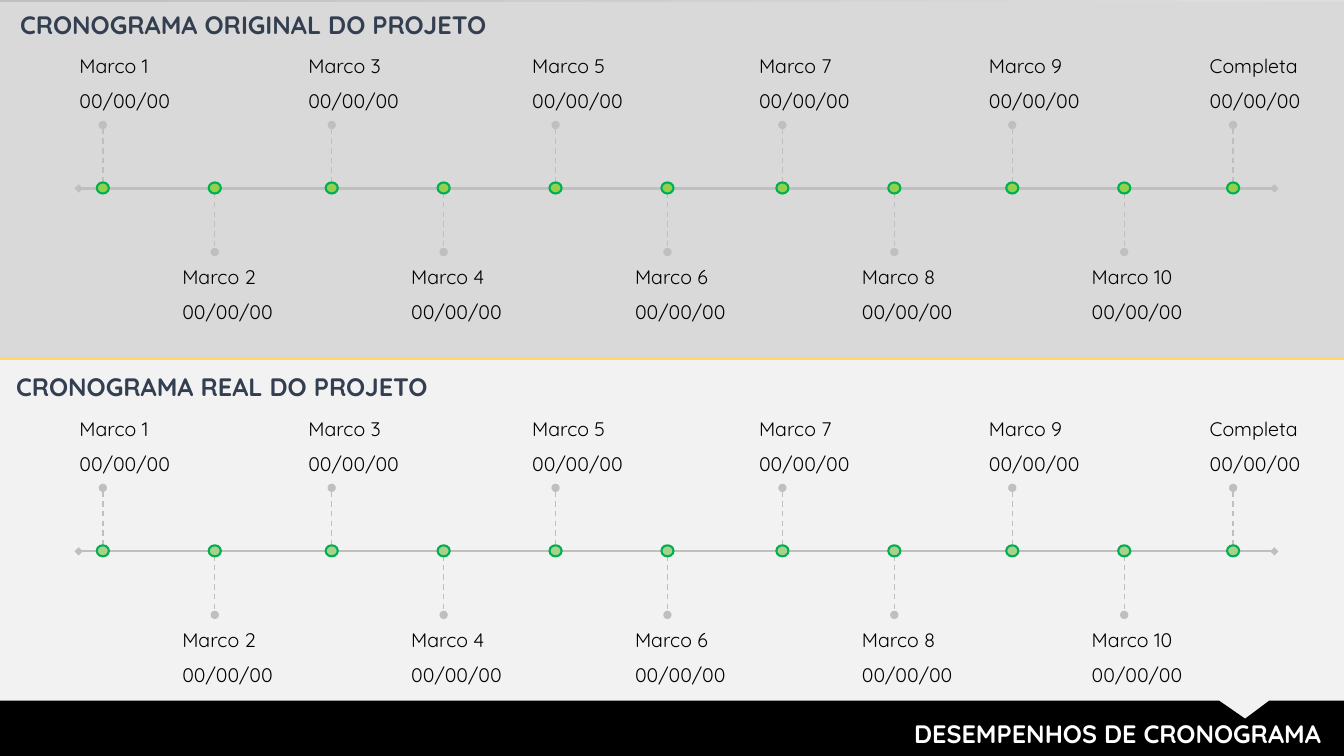
import pptx
import pptx.util
import pptx.dml.color
import pptx.enum.dml
import pptx.enum.shapes
import pptx.enum.text
from lxml import etree
from pptx.oxml.ns import qn
from pptx.util import Inches, Pt

COLORS = {
    "upper": "D9D9D9", "lower": "F2F2F2", "backdrop": "BFBFBF",
    "axis": "BFBFBF", "divider": "FFD966", "ring": "00B050",
    "planned": "92D050", "actual": "A9D18E", "heading": "333F50",
    "label": "000000", "footer": "000000", "footer_text": "FFFFFF",
}
FONT = "Quicksand"
WIDTH, HEIGHT = 13.33, 7.5
NAMES = [f"Marco {number}" for number in range(1, 11)] + ["Completa"]
STEMS = [1.02, 2.13, 3.29, 4.4, 5.51, 6.62, 7.76, 8.87, 10.04, 11.15, 12.23]
DATE = "00/00/00"
AXIS_DROP = 1.87
STEM_LENGTH = 0.63


def color(name):
    return pptx.dml.color.RGBColor.from_string(COLORS[name])


def paint(shape, fill, line=None):
    shape.shadow.inherit = False
    shape.fill.solid()
    shape.fill.fore_color.rgb = color(fill)
    if line:
        shape.line.color.rgb = color(line)
        shape.line.width = Pt(1.5)
    else:
        shape.line.fill.background()


def add_block(shapes, kind, left, top, width, height, fill, line=None):
    block = shapes.add_shape(kind, Inches(left), Inches(top), Inches(width), Inches(height))
    paint(block, fill, line)


def add_line(shapes, start, end, line_color, width, ends=None, dashed=False):
    line = shapes.add_connector(
        pptx.enum.shapes.MSO_CONNECTOR.STRAIGHT,
        Inches(start[0]), Inches(start[1]), Inches(end[0]), Inches(end[1]))
    line.line.color.rgb = color(line_color)
    line.line.width = Pt(width)
    if dashed:
        line.line.dash_style = pptx.enum.dml.MSO_LINE.DASH
    if ends:
        outline = line.line._get_or_add_ln()
        for tag in ("a:headEnd", "a:tailEnd"):
            etree.SubElement(outline, qn(tag), type=ends)
    etree.SubElement(line._element.spPr, qn("a:effectLst"))


def add_text(shapes, left, top, width, height, lines, size, text_color,
             bold=False, inset=(0.1, 0.05), align="LEFT", after=0, spacing=None):
    box = shapes.add_textbox(Inches(left), Inches(top), Inches(width), Inches(height))
    frame = box.text_frame
    frame.word_wrap = True
    frame.margin_left = frame.margin_right = Inches(inset[0])
    frame.margin_top = frame.margin_bottom = Inches(inset[1])
    for index, line in enumerate(lines):
        para = frame.add_paragraph() if index else frame.paragraphs[0]
        para.alignment = getattr(pptx.enum.text.PP_ALIGN, align)
        para.space_after = Pt(after)
        if spacing:
            para.line_spacing = Pt(spacing)
        span = para.add_run()
        span.text = line
        span.font.name = FONT
        span.font.size = Pt(size)
        span.font.bold = bold
        span.font.color.rgb = color(text_color)


def add_background(page):
    fill = page.background.fill
    fill.gradient()
    fill.gradient_angle = 135
    for stop, name, position in zip(fill.gradient_stops, ("lower", "backdrop"), (0, 1)):
        stop.color.rgb = color(name)
        stop.position = position


def add_panel(page, top, height, fill):
    rectangle = pptx.enum.shapes.MSO_SHAPE.RECTANGLE
    add_block(page.shapes, rectangle, -0.02, top, WIDTH + 0.02, height, fill)


def add_footer(page, top, bottom):
    # Black band with a notch in its upper edge
    points = [(0, top), (12.09, top), (12.35, top + 0.18), (12.59, top),
              (WIDTH, top), (WIDTH, bottom), (0, bottom)]
    corners = [(Inches(x), Inches(y)) for x, y in points]
    builder = page.shapes.build_freeform(*corners[0])
    builder.add_line_segments(corners[1:], close=True)
    paint(builder.convert_to_shape(), "footer")
    add_text(page.shapes, 4.14, top + 0.13, 9.06, 0.4, ["DESEMPENHOS DE CRONOGRAMA"],
             18, "footer_text", bold=True, align="RIGHT")


def add_timeline(page, left, top, heading, dot_fill):
    shapes = page.shapes.add_group_shape().shapes
    axis = top + AXIS_DROP
    add_line(shapes, (0.78, axis), (12.64, axis), "axis", 1.5, "diamond")

    # Milestones alternate above and below the axis
    for index, (name, x) in enumerate(zip(NAMES, STEMS)):
        above = index % 2 == 0
        start = axis - STEM_LENGTH if above else axis
        add_line(shapes, (x, start), (x, start + STEM_LENGTH), "axis", 1, "oval", dashed=True)
        add_block(shapes, pptx.enum.shapes.MSO_SHAPE.OVAL,
                  x - 0.06, axis - 0.06, 0.12, 0.11, dot_fill, "ring")
        label_left = x - (0.33 if above else 0.42)
        label_top = axis + (-1.38 if above else 0.71)
        add_text(shapes, label_left, label_top, 1.9, 0.64, [name, DATE], 14, "label", after=8)

    add_text(page.shapes, left, top + 0.03, 5.28, 0.41, [heading], 18, "heading",
             bold=True, inset=(0.12, 0.06), spacing=21.5)


def main():
    deck = pptx.Presentation()
    deck.slide_width, deck.slide_height = Inches(WIDTH), Inches(HEIGHT)
    page = deck.slides.add_slide(deck.slide_layouts[6])

    # Backdrop, panels and footer
    add_background(page)
    add_panel(page, 0.02, 3.54, "upper")
    add_panel(page, 3.56, 3.96, "lower")
    add_footer(page, 6.95, 7.52)

    # Planned and actual schedules
    add_timeline(page, 0.08, 0, "CRONOGRAMA ORIGINAL DO PROJETO", "planned")
    add_timeline(page, 0.04, 3.6, "CRONOGRAMA REAL DO PROJETO", "actual")
    add_line(page.shapes, (0, 3.56), (WIDTH, 3.56), "divider", 2.25)

    deck.save("out.pptx")


if __name__ == "__main__":
    main()
